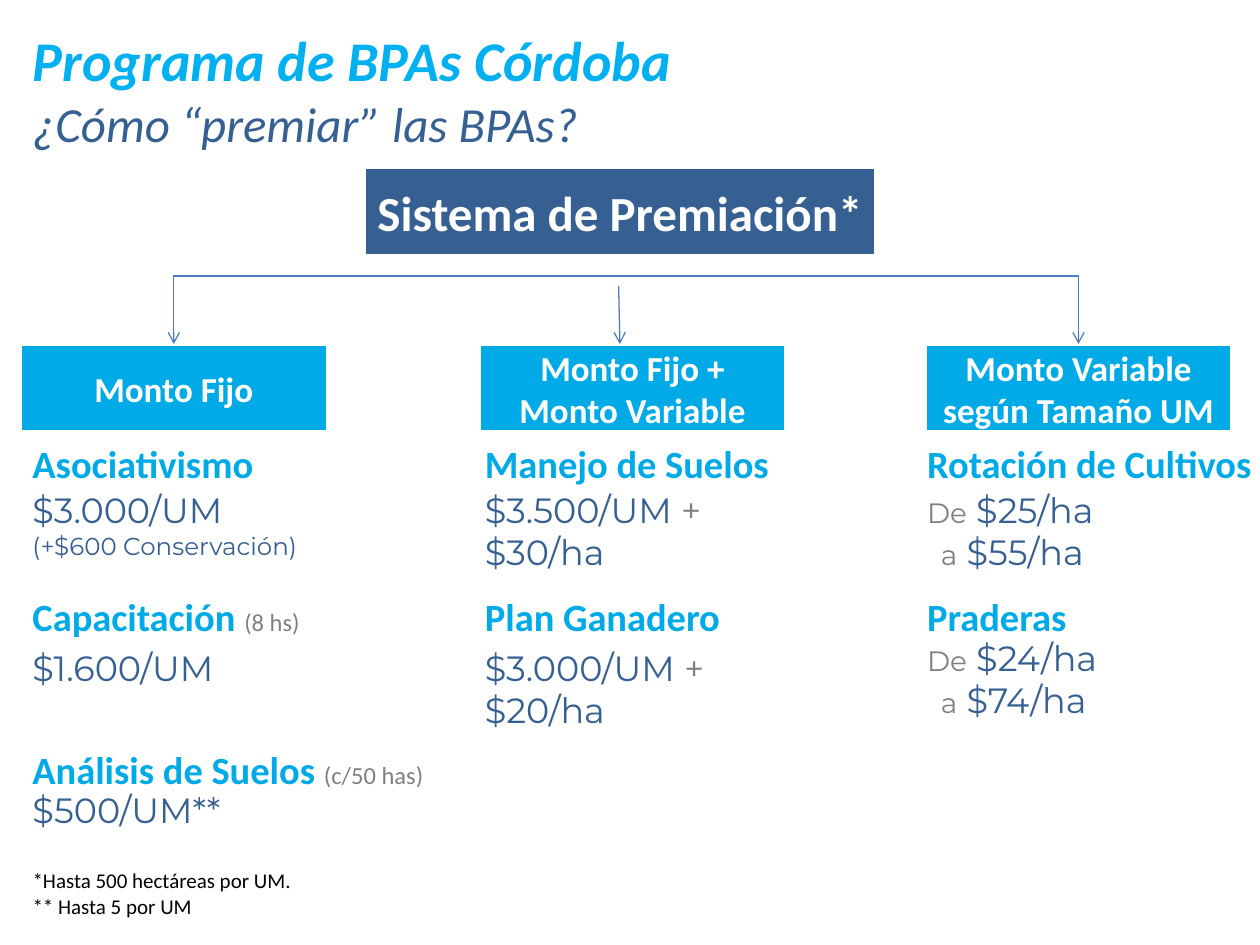
from lxml.etree import SubElement
from pptx import Presentation
from pptx.dml.color import RGBColor
from pptx.enum.shapes import MSO_CONNECTOR as Link, MSO_SHAPE as Shape
from pptx.enum.text import MSO_ANCHOR as Anchor, PP_ALIGN as Align
from pptx.oxml.ns import qn
from pptx.util import Inches, Pt

THEME = {
    "sky": "00B0F0", "cyan": "00AAE6", "navy": "376092", "gray": "808080",
    "white": "FFFFFF", "black": "000000", "link": "4B7EBC",
}
STYLES = {  # font, size, colour, bold, italic
    "title": ("Calibri", 32, "sky", True, True),
    "subtitle": ("Calibri", 28, "navy", False, True),
    "root": ("Calibri", 28, "white", True, False),
    "box": ("Calibri", 20, "white", True, False),
    "heading": ("Calibri", 22, "cyan", True, False),
    "remark": ("Calibri", 14, "gray", False, False),
    "amount": ("Montserrat", 20, "navy", False, False),
    "plus": ("Montserrat", 20, "gray", False, False),
    "range": ("Montserrat", 16, "gray", False, False),
    "extra": ("Montserrat", 14, "navy", False, False),
    "note": ("Calibri", 12, "black", False, False),
}

# A paragraph is a list of (text, style) runs.
TITLE = [[("Programa de BPAs Córdoba", "title")],
         [("¿Cómo “premiar” las BPAs?", "subtitle")]]
ROOT = "Sistema de Premiación*"
NOTES = [[("*Hasta 500 hectáreas por UM.", "note")],
         [("** Hasta 5 por UM", "note")]]


def fixed_plus(fixed, variable):
    return [[(fixed + " ", "amount"), ("+", "plus")], [(variable, "amount")]]


def from_to(low, high):
    return [[("De", "range"), (" " + low, "amount")],
            [("a", "range"), (" " + high, "amount")]]


COLUMNS = [
    {"box": "Monto Fijo", "box_x": 0.16, "text_x": 0.16, "width": 3.34,
     "headings": [[("Asociativismo", "heading")],
                  [("Capacitación ", "heading"), ("(8 hs)", "remark")],
                  [("Análisis de Suelos ", "heading"), ("(c/50 has)", "remark")]],
     "amounts": [(3.83, [[("$3.000/UM", "amount")],
                         [("(+$600 Conservación)", "extra")]]),
                 (5.08, [[("$1.600/UM", "amount")]]),
                 (6.21, [[("$500/UM**", "amount")]])]},
    {"box": "Monto Fijo + Monto Variable", "box_x": 3.8, "text_x": 3.75, "width": 2.48,
     "headings": [[("Manejo de Suelos", "heading")], [("Plan Ganadero", "heading")]],
     "amounts": [(3.83, fixed_plus("$3.500/UM", "$30/ha")),
                 (5.08, fixed_plus("$3.000/UM", "$20/ha"))]},
    {"box": "Monto Variable según Tamaño UM", "box_x": 7.34, "text_x": 7.26, "width": 2.81,
     "headings": [[("Rotación de Cultivos", "heading")], [("Praderas", "heading")]],
     "amounts": [(3.83, from_to("$25/ha", "$55/ha")),
                 (5, from_to("$24/ha", "$74/ha"))]},
]
BOX_Y, BOX_W, BOX_H = 2.73, 2.44, 0.7
HEADING_Y, HEADING_GAP = 3.44, 61
AMOUNT_W, LINE_H, RANGE_INDENT = 2.7, 0.39, 0.11
FORK_X, FORK_Y = 4.96, 2.19


def color(name):
    return RGBColor.from_string(THEME[name])


def inches(*lengths):
    return [Inches(v) for v in lengths]


def write(tf, paragraphs, align=Align.LEFT, gap=0):
    for i, runs in enumerate(paragraphs):
        p = tf.paragraphs[0] if i == 0 else tf.add_paragraph()
        p.alignment = align
        p.space_before = Pt(gap if i else 0)
        if runs[0] == ("a", "range"):
            p._p.get_or_add_pPr().set("marL", str(Inches(RANGE_INDENT)))
        for text, style in runs:
            r = p.add_run()
            r.text = text
            name, size, shade, bold, italic = STYLES[style]
            values = {"name": name, "size": Pt(size), "bold": bold, "italic": italic}
            for key, value in values.items():
                setattr(r.font, key, value)
            r.font.color.rgb = color(shade)


def add_text(s, at, paragraphs, wrap=True, gap=0):
    tf = s.shapes.add_textbox(*inches(*at)).text_frame
    tf.word_wrap = wrap
    write(tf, paragraphs, gap=gap)


def add_box(s, at, text, style, fill):
    sp = s.shapes.add_shape(Shape.RECTANGLE, *inches(*at))
    sp.shadow.inherit = False
    sp.fill.solid()
    sp.fill.fore_color.rgb = color(fill)
    sp.line.color.rgb = color("white")
    sp.line.width = Pt(2)
    sp.text_frame.vertical_anchor = Anchor.MIDDLE
    write(sp.text_frame, [[(text, style)]], Align.CENTER)
    return sp


def add_arrow(s, kind, start, end):
    cxn = s.shapes.add_connector(kind, *inches(*start, *end))
    cxn.line.color.rgb = color("link")
    cxn.line.width = Pt(0.75)
    SubElement(cxn.line._get_or_add_ln(), qn("a:tailEnd"), type="arrow")
    SubElement(cxn._element.spPr, qn("a:effectLst"))
    return cxn


def add_branch(s, box, center_x):
    """Single-bend arrow from the fork to the top of a box."""
    cxn = add_arrow(s, Link.ELBOW, (FORK_X, FORK_Y), (center_x, BOX_Y))
    cxn._element.spPr.find(qn("a:prstGeom")).set("prst", "bentConnector2")
    cxn.end_connect(box, 0)


def add_column(s, column):
    x = column["text_x"]
    box = add_box(s, (column["box_x"], BOX_Y, BOX_W, BOX_H), column["box"], "box", "cyan")
    add_text(s, (x, HEADING_Y, column["width"], 1.68), column["headings"],
             wrap=False, gap=HEADING_GAP)
    for y, lines in column["amounts"]:
        add_text(s, (x, y, AMOUNT_W, LINE_H * len(lines)), lines)
    return box


def main():
    prs = Presentation()
    prs.slide_width, prs.slide_height = inches(10, 7.5)
    s = prs.slides.add_slide(prs.slide_layouts[5])

    title = s.shapes.title
    title.left, title.top, title.width, title.height = inches(0.16, 0.15, 9.45, 1.11)
    title.text_frame.vertical_anchor = Anchor.MIDDLE
    write(title.text_frame, TITLE)

    add_box(s, (2.89, 1.33, 4.06, BOX_H), ROOT, "root", "navy")
    boxes = [add_column(s, column) for column in COLUMNS]
    for i in (0, 2):
        add_branch(s, boxes[i], COLUMNS[i]["box_x"] + BOX_W / 2)
    add_arrow(s, Link.STRAIGHT, (4.91, 2.27), (4.92, BOX_Y))
    add_text(s, (0.16, 6.84, 4.61, 0.5), NOTES)

    prs.save("out.pptx")


if __name__ == "__main__":
    main()
